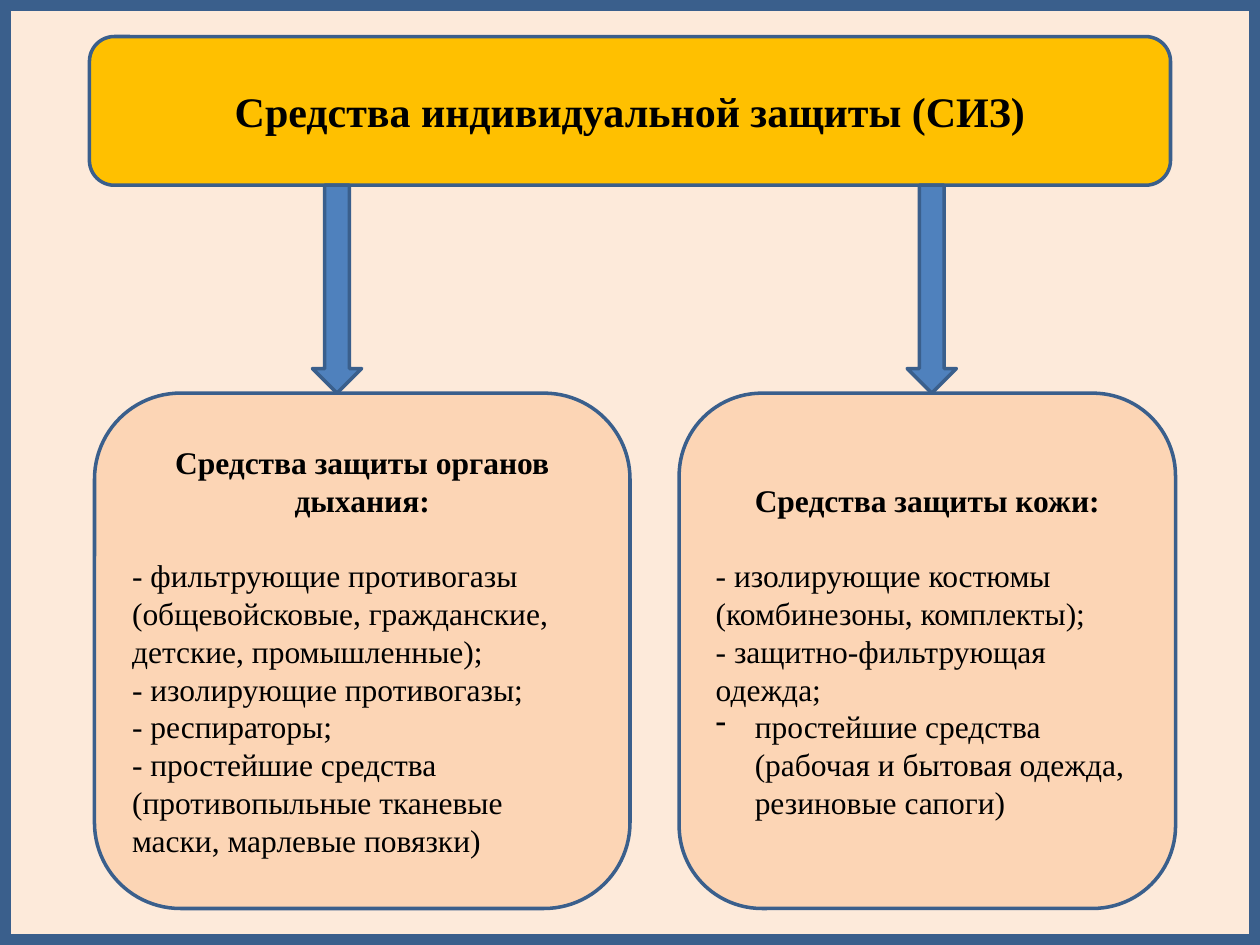
from lxml.etree import SubElement
from pptx import Presentation
from pptx.dml.color import RGBColor
from pptx.enum.shapes import MSO_SHAPE
from pptx.enum.text import MSO_ANCHOR, PP_ALIGN
from pptx.oxml.ns import qn
from pptx.util import Inches, Pt

WIDTH, HEIGHT = 10, 7.5
FONT = "Times New Roman"
COLORS = {
    "page": "FDEADA",
    "title": "FFC000",
    "group": "FCD5B5",
    "arrow": "4F81BD",
    "line": "3A5F8C",
    "text": "000000",
}
TITLE = "Средства индивидуальной защиты (СИЗ)"
GROUPS = [
    {
        "left": 0.75,
        "width": 4.25,
        "arrow": 2.48,
        "heading": "Средства защиты органов дыхания:",
        "items": [
            "- фильтрующие противогазы (общевойсковые, гражданские, детские, промышленные);",
            "- изолирующие противогазы;",
            "- респираторы;",
            "- простейшие средства (противопыльные тканевые маски, марлевые повязки)",
        ],
        "bulleted": [],
    },
    {
        "left": 5.39,
        "width": 3.94,
        "arrow": 7.2,
        "heading": "Средства защиты кожи:",
        "items": [
            "- изолирующие костюмы (комбинезоны, комплекты);",
            "- защитно-фильтрующая одежда;",
        ],
        "bulleted": ["простейшие средства (рабочая и бытовая одежда, резиновые сапоги)"],
    },
]
TITLE_TOP, TITLE_HEIGHT = 0.29, 1.18
TITLE_BOTTOM = TITLE_TOP + TITLE_HEIGHT
GROUP_TOP, GROUP_HEIGHT = 3.12, 4.09
ARROW_WIDTH = 0.39
LINE_PITCH = 21.6
INDENT = 0.31


def add_box(page, kind, left, top, width, height, fill, line_width=2):
    box = page.shapes.add_shape(kind, *map(Inches, (left, top, width, height)))
    box.shadow.inherit = False
    box.fill.solid()
    box.fill.fore_color.rgb = RGBColor.from_string(COLORS[fill])
    box.line.color.rgb = RGBColor.from_string(COLORS["line"])
    box.line.width = Pt(line_width)
    box.text_frame.word_wrap = True
    box.text_frame.vertical_anchor = MSO_ANCHOR.MIDDLE
    return box


def add_text(box, text, size=18, bold=False, align=PP_ALIGN.LEFT, pitch=LINE_PITCH,
             gap=0, bullet=None):
    frame = box.text_frame
    para = frame.add_paragraph() if frame.text else frame.paragraphs[0]
    para.alignment = align
    para.line_spacing = Pt(pitch)
    para.space_after = Pt(gap)
    span = para.add_run()
    span.text = text
    span.font.name = FONT
    span.font.size = Pt(size)
    span.font.bold = bold
    span.font.color.rgb = RGBColor.from_string(COLORS["text"])
    if bullet:
        props = para._p.get_or_add_pPr()
        props.set("marL", str(Inches(INDENT)))
        props.set("indent", str(-Inches(INDENT)))
        SubElement(props, qn("a:buFontTx"))
        SubElement(props, qn("a:buChar")).set("char", bullet)


def main():
    deck = Presentation()
    deck.slide_width, deck.slide_height = Inches(WIDTH), Inches(HEIGHT)
    page = deck.slides.add_slide(deck.slide_layouts[6])

    add_box(page, MSO_SHAPE.RECTANGLE, 0, 0, WIDTH, HEIGHT, "page", line_width=12.25)
    title = add_box(page, MSO_SHAPE.ROUNDED_RECTANGLE, 0.71, TITLE_TOP, 8.58,
                    TITLE_HEIGHT, "title")
    add_text(title, TITLE, size=24, bold=True, align=PP_ALIGN.CENTER, pitch=28.8)

    for group in GROUPS:
        box = add_box(page, MSO_SHAPE.ROUNDED_RECTANGLE, group["left"], GROUP_TOP,
                      group["width"], GROUP_HEIGHT, "group")
        add_text(box, group["heading"], bold=True, align=PP_ALIGN.CENTER, gap=LINE_PITCH)
        for item in group["items"]:
            add_text(box, item)
        for item in group["bulleted"]:
            add_text(box, item, bullet="-")

    for group in GROUPS:
        add_box(page, MSO_SHAPE.DOWN_ARROW, group["arrow"], TITLE_BOTTOM, ARROW_WIDTH,
                GROUP_TOP - TITLE_BOTTOM, "arrow")

    deck.save("out.pptx")


if __name__ == "__main__":
    main()
